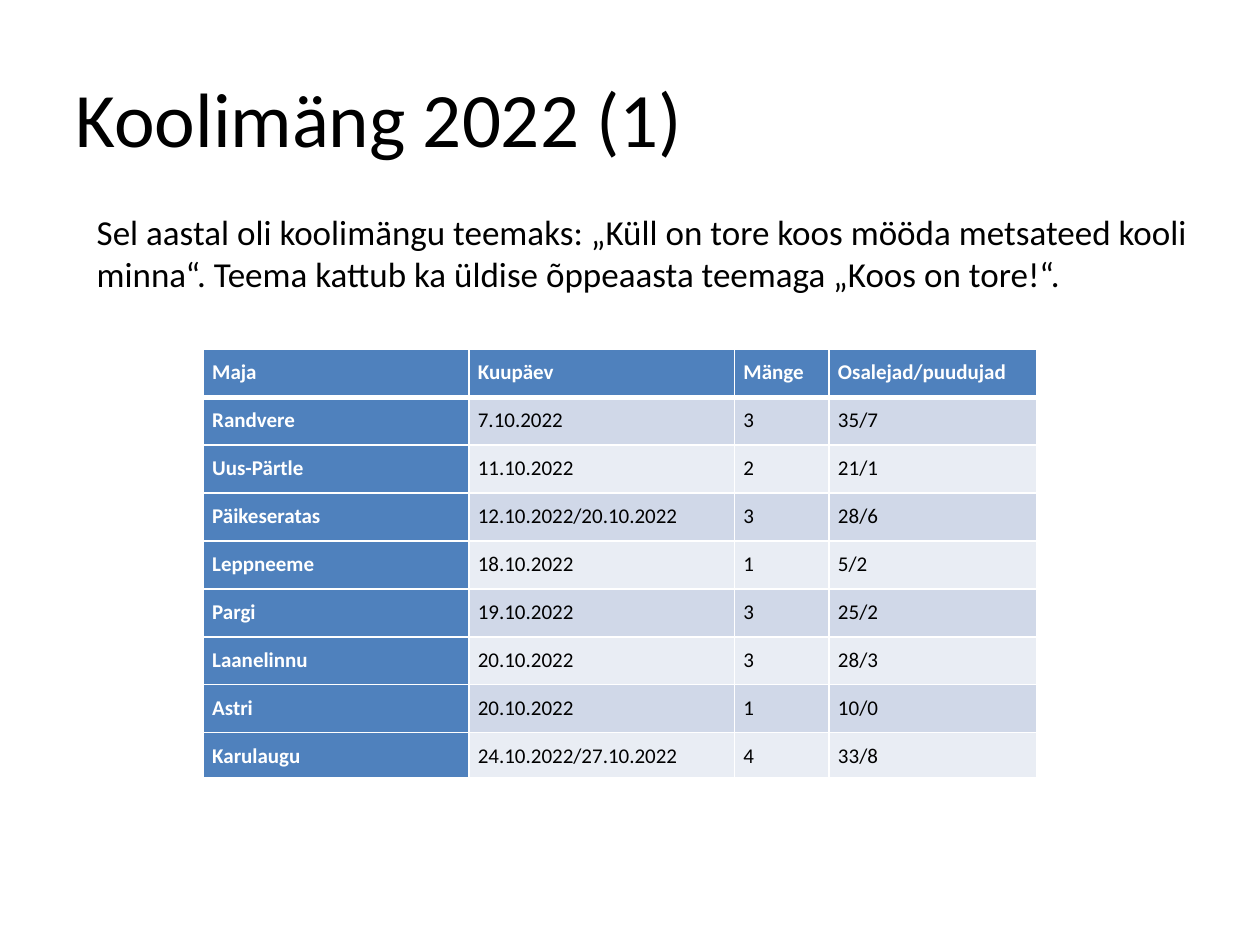
from pptx import Presentation
from pptx.dml.color import RGBColor
from pptx.enum import text
from pptx.oxml import parse_xml
from pptx.oxml.ns import nsdecls
from pptx.util import Pt

# Content
TITLE = "Koolimäng 2022 (1)"
INTRO = ("Sel aastal oli koolimängu teemaks: „Küll on tore koos mööda metsateed kooli "
         "minna“. Teema kattub ka üldise õppeaasta teemaga „Koos on tore!“.")
GAMES = [
    ("Maja", "Kuupäev", "Mänge", "Osalejad/puudujad"),
    ("Randvere", "7.10.2022", "3", "35/7"),
    ("Uus-Pärtle", "11.10.2022", "2", "21/1"),
    ("Päikeseratas", "12.10.2022/20.10.2022", "3", "28/6"),
    ("Leppneeme", "18.10.2022", "1", "5/2"),
    ("Pargi", "19.10.2022", "3", "25/2"),
    ("Laanelinnu", "20.10.2022", "3", "28/3"),
    ("Astri", "20.10.2022", "1", "10/0"),
    ("Karulaugu", "24.10.2022/27.10.2022", "4", "33/8"),
]

# Format
FONT = "Calibri"
BLACK = RGBColor(0x00, 0x00, 0x00)
WHITE = RGBColor(0xFF, 0xFF, 0xFF)
BLUE = RGBColor(0x4F, 0x81, 0xBD)
BANDS = (RGBColor(0xE9, 0xED, 0xF4), RGBColor(0xD0, 0xD8, 0xE8))
COLUMN_WIDTHS = (151.8, 151.8, 54, 118.8)
ROW_HEIGHTS = [27.4] * (len(GAMES) - 1) + [26]
TABLE_LEFT, TABLE_TOP = 116.2, 199.6
CELL_MARGIN = 5.1


def write(frame, words, size, color, bold=False, spacing=None):
    paragraph = frame.paragraphs[0]
    paragraph.alignment = text.PP_ALIGN.LEFT
    paragraph.line_spacing = spacing
    run = paragraph.add_run()
    run.text = words
    for name, value in {"name": FONT, "size": Pt(size), "bold": bold}.items():
        setattr(run.font, name, value)
    run.font.color.rgb = color


def add_borders(cell, bottom):
    properties = cell._tc.get_or_add_tcPr()
    for side, width in {"L": 1, "R": 1, "T": 1, "B": bottom}.items():
        properties.append(parse_xml(
            f'<a:ln{side} {nsdecls("a")} w="{Pt(width)}"><a:solidFill>'
            f'<a:srgbClr val="{WHITE}"/></a:solidFill></a:ln{side}>'))


presentation = Presentation()
presentation.slide_width, presentation.slide_height = Pt(720), Pt(540)
slide = presentation.slides.add_slide(presentation.slide_layouts[5])

# Title
title = slide.shapes.title
for name, value in {"left": 36, "top": 21.6, "width": 648, "height": 90}.items():
    setattr(title, name, Pt(value))
title.text_frame.vertical_anchor = text.MSO_ANCHOR.MIDDLE
write(title.text_frame, TITLE, 44, BLACK)

# Introduction
intro = slide.shapes.add_textbox(Pt(48.2), Pt(116.6), Pt(648), Pt(356.4))
intro.text_frame.word_wrap = True
write(intro.text_frame, INTRO, 20, BLACK)

# Table of games
games = slide.shapes.add_table(
    len(GAMES), len(COLUMN_WIDTHS), Pt(TABLE_LEFT), Pt(TABLE_TOP),
    Pt(sum(COLUMN_WIDTHS)), Pt(sum(ROW_HEIGHTS))).table
games.first_col = True
for column, width in zip(games.columns, COLUMN_WIDTHS):
    column.width = Pt(width)
for row, height in zip(games.rows, ROW_HEIGHTS):
    row.height = Pt(height)

for r, game in enumerate(GAMES):
    for c, words in enumerate(game):
        cell = games.cell(r, c)
        heading = r == 0 or c == 0
        for side in ("left", "right", "top", "bottom"):
            setattr(cell, f"margin_{side}", Pt(CELL_MARGIN))
        add_borders(cell, bottom=3 if r == 0 else 1)
        cell.fill.solid()
        cell.fill.fore_color.rgb = BLUE if heading else BANDS[r % 2]
        write(cell.text_frame, words, 12, WHITE if heading else BLACK, heading, 1.07)

presentation.save("out.pptx")
